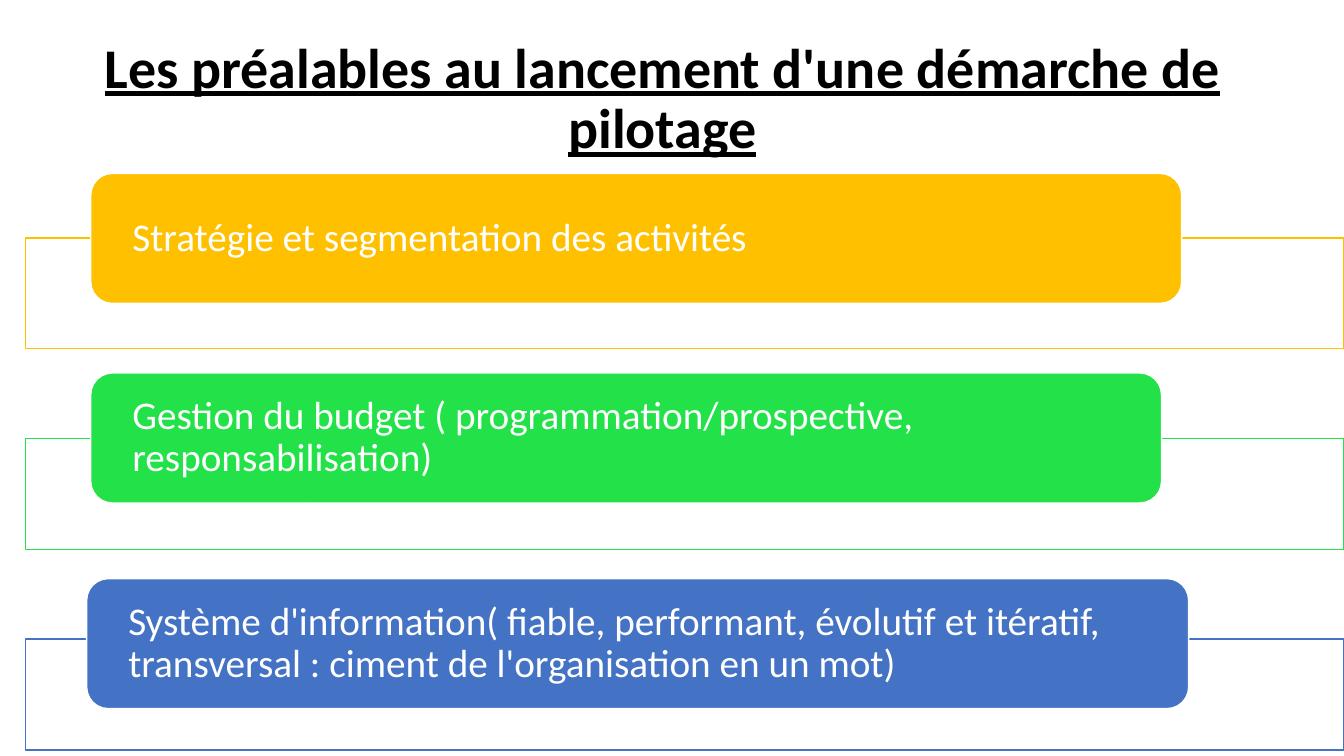
from lxml.etree import SubElement
from pptx import Presentation
from pptx.dml.color import RGBColor
from pptx.enum.shapes import MSO_SHAPE
from pptx.enum.text import MSO_ANCHOR, MSO_AUTO_SIZE, PP_ALIGN
from pptx.oxml.ns import qn
from pptx.util import Inches, Pt

FONT = "Calibri"
WHITE = "FFFFFF"
FRAME_TOP, FRAME_PITCH = 2.36, 1.99
FRAME_LEFT, FRAME_WIDTH, FRAME_HEIGHT = 0.25, 13.08, 1.1
CARD_HEIGHT = 1.29

# text, colour, card left, card top, card width
PREREQUISITES = [
    ("Stratégie et segmentation des activités", "FFC000", 0.9, 1.72, 10.82),
    ("Gestion du budget ( programmation/prospective, responsabilisation)",
     "23E148", 0.9, 3.7, 10.62),
    ("Système d'information( fiable, performant, évolutif et itératif, "
     "transversal : ciment de l'organisation en un mot)",
     "4472C4", 0.86, 5.74, 10.93),
]


def rgb(colour):
    return RGBColor.from_string(colour)


def write_text(shape, text, *, size, colour, align, margins,
               bold=False, underline=False, auto_size=MSO_AUTO_SIZE.NONE):
    frame = shape.text_frame
    frame.word_wrap = True
    frame.auto_size = auto_size
    frame.vertical_anchor = MSO_ANCHOR.MIDDLE
    side, edge = (Inches(margin) for margin in margins)
    frame.margin_left = frame.margin_right = side
    frame.margin_top = frame.margin_bottom = edge
    paragraph = frame.paragraphs[0]
    paragraph.alignment = align
    paragraph.line_spacing = 0.9
    run = paragraph.add_run()
    run.text = text
    font = run.font
    font.name, font.size = FONT, Pt(size)
    font.bold, font.underline = bold, underline
    font.color.rgb = rgb(colour)


def place(shape, left, top, width, height):
    shape.left, shape.top = Inches(left), Inches(top)
    shape.width, shape.height = Inches(width), Inches(height)


def add_box(slide, preset, box, fill, line):
    shape = slide.shapes.add_shape(preset, *(Inches(length) for length in box))
    shape.shadow.inherit = False
    shape.fill.solid()
    shape.fill.fore_color.rgb = rgb(fill)
    shape.line.color.rgb = rgb(line)
    shape.line.width = Pt(1)
    return shape


def set_opacity(shape, percent):
    fill_colour = shape.fill._xPr.find(qn("a:solidFill"))[0]
    SubElement(fill_colour, qn("a:alpha"), val=str(percent * 1000))


def add_prerequisite(slide, row, text, colour, left, top, width):
    """Draw one open frame with its coloured card on top."""
    frame_box = (FRAME_LEFT, FRAME_TOP + row * FRAME_PITCH,
                 FRAME_WIDTH, FRAME_HEIGHT)
    frame = add_box(slide, MSO_SHAPE.RECTANGLE, frame_box, WHITE, colour)
    set_opacity(frame, 90)
    card = add_box(slide, MSO_SHAPE.ROUNDED_RECTANGLE,
                   (left, top, width, CARD_HEIGHT), colour, WHITE)
    write_text(card, text, size=28, colour=WHITE,
               align=PP_ALIGN.LEFT, margins=(0.35, 0))


def main():
    deck = Presentation()
    deck.slide_width, deck.slide_height = Inches(13.33), Inches(7.5)
    title_only = deck.slide_layouts[5]
    slide = deck.slides.add_slide(title_only)
    title = slide.shapes.title
    place(title, 0, 0.64, 13.14, 0.71)
    write_text(title, "Les préalables au lancement d'une démarche de pilotage",
               size=40, colour="000000", align=PP_ALIGN.CENTER,
               margins=(0.1, 0.05), bold=True, underline=True,
               auto_size=MSO_AUTO_SIZE.SHAPE_TO_FIT_TEXT)
    for row, prerequisite in enumerate(PREREQUISITES):
        add_prerequisite(slide, row, *prerequisite)
    deck.save("out.pptx")


if __name__ == "__main__":
    main()
